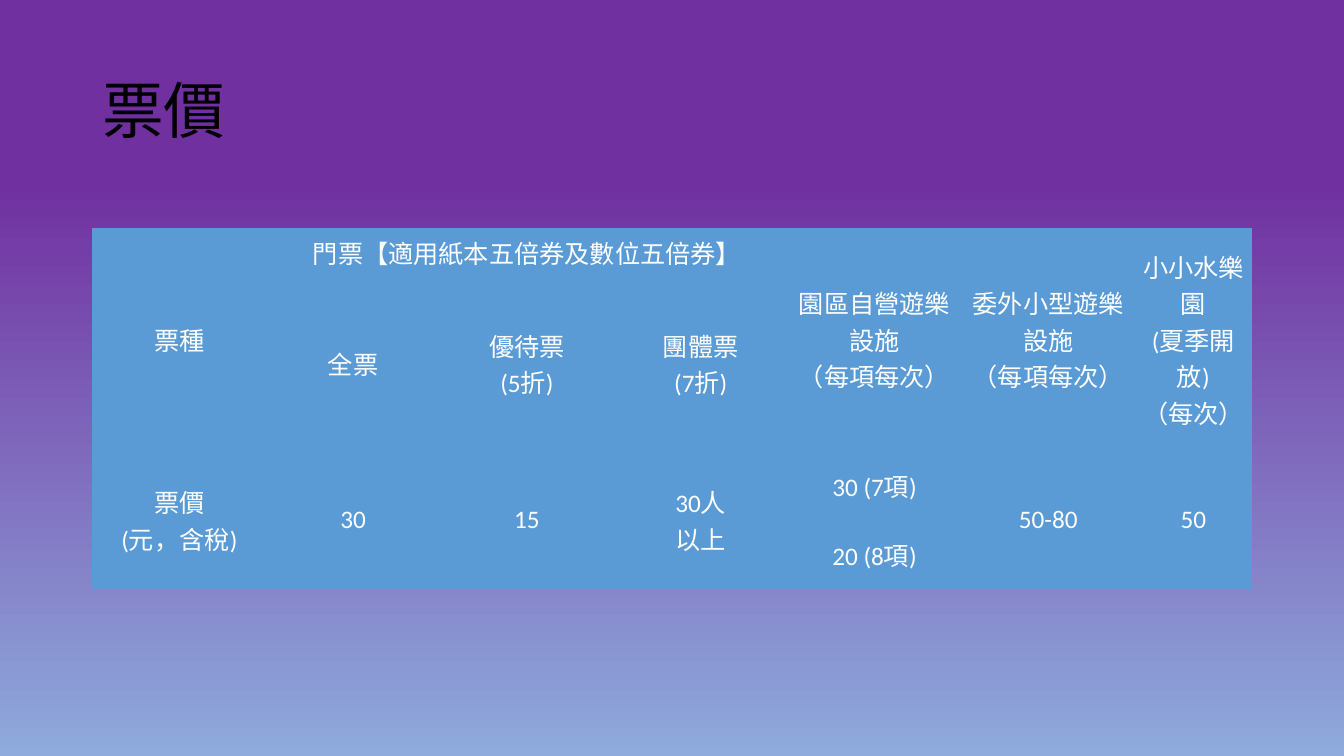
"""Build the ticket price slide."""
from pptx import Presentation
from pptx.dml.color import RGBColor as RGB
from pptx.enum.text import MSO_ANCHOR as Anchor, PP_ALIGN as Align
from pptx.oxml.ns import qn
from pptx.util import Cm, Pt

TITLE = "票價"
CELLS = [
    ["票種", "門票【適用紙本五倍券及數位五倍券】", "", "",
     "園區自營遊樂設施\v（每項每次）", "委外小型遊樂設施\v（每項每次）",
     "小小水樂園\v(夏季開放)\v（每次）"],
    ["", "全票", "優待票\v(5折)", "團體票\v(7折)", "", "", ""],
    ["票價\v(元，含稅)", "30", "15", "30人\v以上", "30 (7項)", "50-80", "50"],
    ["", "", "", "", "20 (8項)", "", ""],
]
HEADER_SPANS = [((0, 0), (1, 0)), ((0, 1), (0, 3))] + [((0, c), (1, c)) for c in (4, 5, 6)]
PRICE_SPANS = [((2, c), (3, c)) for c in (0, 1, 2, 3, 5, 6)]
COL_WIDTHS = [4.38] * 6 + [2.93]
ROW_HEIGHTS = [1.24, 4.37, 1.75, 1.75]
LEFT, WIDTH = 2.33, sum(COL_WIDTHS)
NO_GRID_STYLE = "{2D5ABB26-0587-4C30-8999-92F81FD0307C}"
THEME = {
    "font": "Calibri", "title_size": 44, "cell_size": 18,
    "title": RGB.from_string("000000"), "text": RGB.from_string("FFFFFF"),
    "cell": RGB.from_string("5B9BD5"),
    "background": [(0.24, RGB.from_string("7030A0")), (1, RGB.from_string("8FAADC"))],
}


def style_runs(p, size, color):
    for r in p.runs:
        r.font.name = THEME["font"]
        r.font.size = Pt(size)
        r.font.color.rgb = color


def paint_background(s):
    fill = s.background.fill
    fill.gradient()
    fill.gradient_angle = 270
    for stop, (position, color) in zip(fill.gradient_stops, THEME["background"]):
        stop.position = position
        stop.color.rgb = color


def add_title(s):
    tf = s.shapes.add_textbox(Cm(LEFT), Cm(1.01), Cm(WIDTH), Cm(3.68)).text_frame
    tf.word_wrap = True
    tf.vertical_anchor = Anchor.MIDDLE
    tf.text = TITLE
    p = tf.paragraphs[0]
    p.line_spacing = 0.9
    style_runs(p, THEME["title_size"], THEME["title"])


def fill_cell(cell, text):
    cell.fill.solid()
    cell.fill.fore_color.rgb = THEME["cell"]
    cell.vertical_anchor = Anchor.MIDDLE
    cell.margin_left = cell.margin_right = cell.margin_top = cell.margin_bottom = Cm(0.08)
    cell.text_frame.text = text
    p = cell.text_frame.paragraphs[0]
    p.alignment = Align.CENTER
    p.font.size = Pt(THEME["cell_size"])
    style_runs(p, THEME["cell_size"], THEME["text"])


def add_prices(s):
    frame = s.shapes.add_table(len(ROW_HEIGHTS), len(COL_WIDTHS), Cm(LEFT), Cm(5.74),
                               Cm(WIDTH), Cm(sum(ROW_HEIGHTS)))
    table = frame.table
    table.first_row = table.horz_banding = False
    for style in frame._element.iter(qn("a:tableStyleId")):
        style.text = NO_GRID_STYLE
    for column, width in zip(table.columns, COL_WIDTHS):
        column.width = Cm(width)
    for row, height, texts in zip(table.rows, ROW_HEIGHTS, CELLS):
        row.height = Cm(height)
        for cell, text in zip(row.cells, texts):
            fill_cell(cell, text)
    for start, end in HEADER_SPANS + PRICE_SPANS:
        table.cell(*start).merge(table.cell(*end))


def main():
    prs = Presentation()
    prs.slide_width, prs.slide_height = Cm(33.87), Cm(19.05)
    s = prs.slides.add_slide(prs.slide_layouts[6])
    paint_background(s)
    add_title(s)
    add_prices(s)
    prs.save("out.pptx")


if __name__ == "__main__":
    main()
